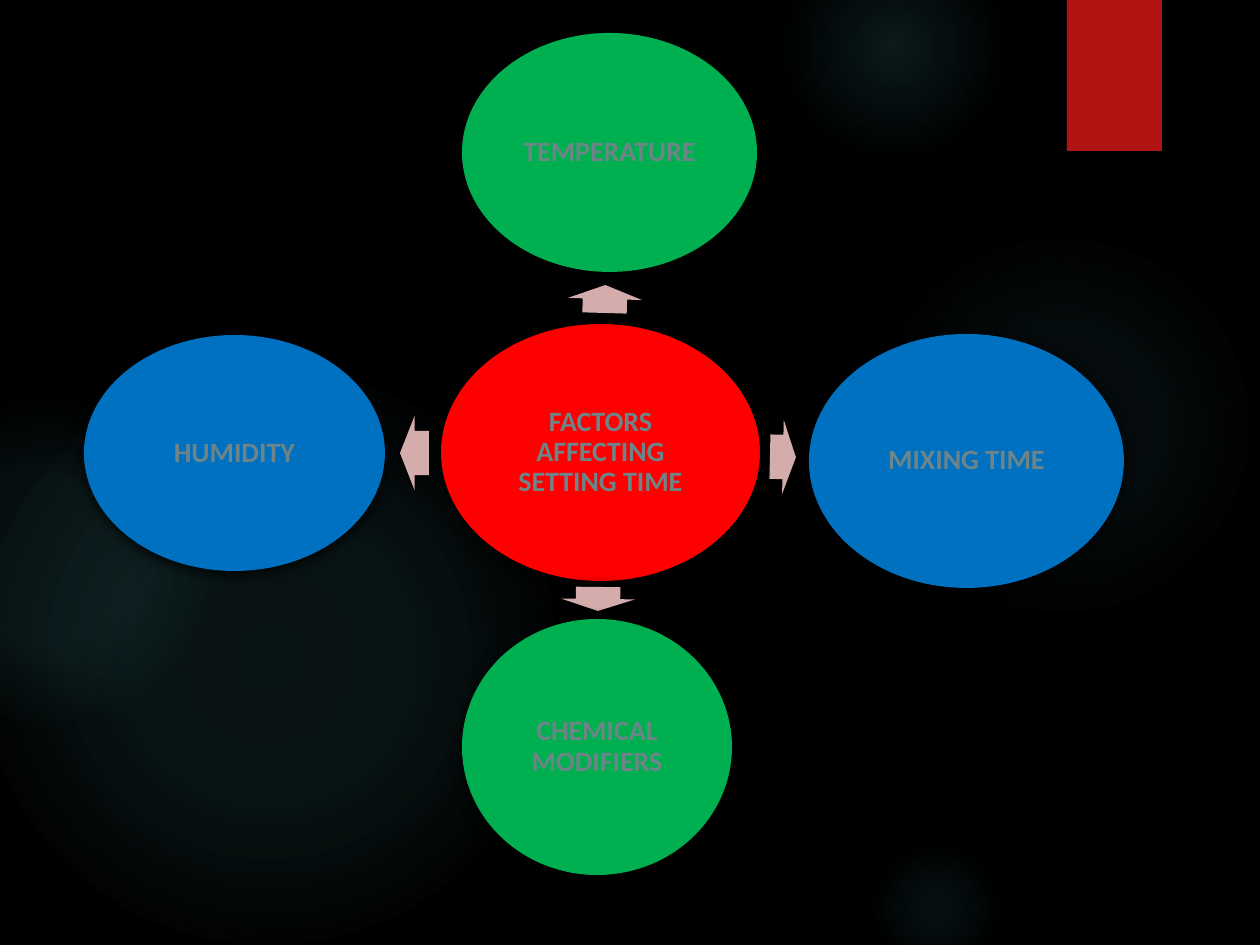
from dataclasses import dataclass

from lxml import etree
from pptx import Presentation
from pptx import util as u
from pptx.dml.color import RGBColor
from pptx.enum import shapes, text
from pptx.oxml import ns, parse_xml

SCALE = 914400 / 126
SLIDE = (0, 0, 1260, 945)
DIAGRAM = (84, 33, 1040, 841)


@dataclass(frozen=True)
class Theme:
    """Colours, font and type size of the slide."""
    back: str = "000000"
    glow: str = "50B9C1"
    tab: str = "B01513"
    hub: str = "FF0000"
    vertical: str = "00B050"
    side: str = "0070C0"
    arrow: str = "D4ACAB"
    label: str = "6D8588"
    font: str = "Calibri"
    size: int = 16


T = Theme()


def px(n):
    """Turn pixels into EMU."""
    return u.Emu(round(n * SCALE))


def add_shape(s, kind, box, at, color=None):
    """Add a borderless shape at a place relative to the box."""
    x, y, w, h = at
    sp = s.shapes.add_shape(kind, px(box[0] + x), px(box[1] + y), px(w), px(h))
    sp.shadow.inherit = False
    sp.line.fill.background()
    if color:
        sp.fill.solid()
        sp.fill.fore_color.rgb = RGBColor.from_string(color)
    return sp


def add_shadow(sp, alpha, blur, dist):
    """Cast a black shadow straight down, with lengths in points."""
    effects = sp._element.spPr.find(ns.qn("a:effectLst"))
    shadow = etree.SubElement(effects, ns.qn("a:outerShdw"), blurRad=str(u.Pt(blur)),
                              dist=str(u.Pt(dist)), dir="5400000", rotWithShape="0")
    black = etree.SubElement(shadow, ns.qn("a:srgbClr"), val="000000")
    etree.SubElement(black, ns.qn("a:alpha"), val=str(alpha * 1000))


def add_glow(s, box, x, y, size, stops):
    """Add a soft round light that fades outwards."""
    sp = add_shape(s, shapes.MSO_SHAPE.OVAL, box, (x, y, size, size))
    gs = "".join(
        f'<a:gs pos="{pos * 1000}"><a:srgbClr val="{T.glow}">'
        f'<a:alpha val="{alpha * 1000}"/></a:srgbClr></a:gs>'
        for pos, alpha in stops)
    fill = parse_xml(
        f'<a:gradFill {ns.nsdecls("a")} rotWithShape="1"><a:gsLst>{gs}</a:gsLst>'
        '<a:path path="circle"><a:fillToRect l="50000" t="50000" r="50000" b="50000"/>'
        '</a:path></a:gradFill>')
    sp._element.spPr.find(ns.qn("a:prstGeom")).addnext(fill)


def add_backdrop(s, box):
    """Fill the background and place the lights and the corner tab."""
    s.background.fill.solid()
    s.background.fill.fore_color.rgb = RGBColor.from_string(T.back)
    for x, y, size, inner, middle, end in (
            (868, 231, 388, 7, 6, 69),
            (784, -63, 220, 14, 7, 73),
            (868, 840, 136, 9, 5, 66),
            (-21, 368, 577, 11, 10, 75),
            (-116, 399, 325, 8, 8, 72)):
        add_glow(s, box, x, y, size, ((0, inner), (36, middle), (end, 0)))
    tab = add_shape(s, shapes.MSO_SHAPE.RECTANGLE, box, (1067, 0, 95, 151), T.tab)
    add_shadow(tab, 45, 3, 2)


def add_factor(s, box, label, at, color):
    """Add a labelled oval."""
    sp = add_shape(s, shapes.MSO_SHAPE.OVAL, box, at, color)
    add_shadow(sp, 100, 8.5, 1)
    tf = sp.text_frame
    tf.word_wrap = True
    tf.vertical_anchor = text.MSO_ANCHOR.MIDDLE
    tf.margin_left = tf.margin_right = tf.margin_top = tf.margin_bottom = px(3)
    tf.text = label
    p = tf.paragraphs[0]
    p.alignment = text.PP_ALIGN.CENTER
    p.line_spacing = 0.9
    font = p.runs[0].font
    font.name, font.size, font.bold = T.font, u.Pt(T.size), True
    font.color.rgb = RGBColor.from_string(T.label)


def add_arrow(s, box, at, angle):
    """Add a block arrow turned away from the hub."""
    sp = add_shape(s, shapes.MSO_SHAPE.RIGHT_ARROW, box, at, T.arrow)
    sp.adjustments[0], sp.adjustments[1] = 0.6, 0.5
    sp.rotation = angle
    add_shadow(sp, 100, 8.5, 1)


def add_diagram(s, box):
    """Place the hub with four factors and the arrows that lead to them."""
    add_factor(s, box, "FACTORS AFFECTING SETTING TIME", (357, 291, 319, 257), T.hub)
    for label, at, color, arrow, angle in (
            ("TEMPERATURE", (378, 0, 295, 239), T.vertical, (507, 229, 28, 74), 271.7),
            ("MIXING TIME", (725, 301, 315, 254), T.side, (686, 387, 26, 74), 1.3),
            ("CHEMICAL MODIFIERS", (378, 586, 270, 256), T.vertical, (502, 529, 24, 74), 90.7),
            ("HUMIDITY", (0, 302, 301, 236), T.side, (316, 383, 29, 74), 180)):
        add_arrow(s, box, arrow, angle)
        add_factor(s, box, label, at, color)


def main():
    """Build the slide and save it."""
    prs = Presentation()
    prs.slide_width, prs.slide_height = px(SLIDE[2]), px(SLIDE[3])
    s = prs.slides.add_slide(prs.slide_layouts[6])
    add_backdrop(s, SLIDE)
    add_diagram(s, DIAGRAM)
    prs.save("out.pptx")


if __name__ == "__main__":
    main()
